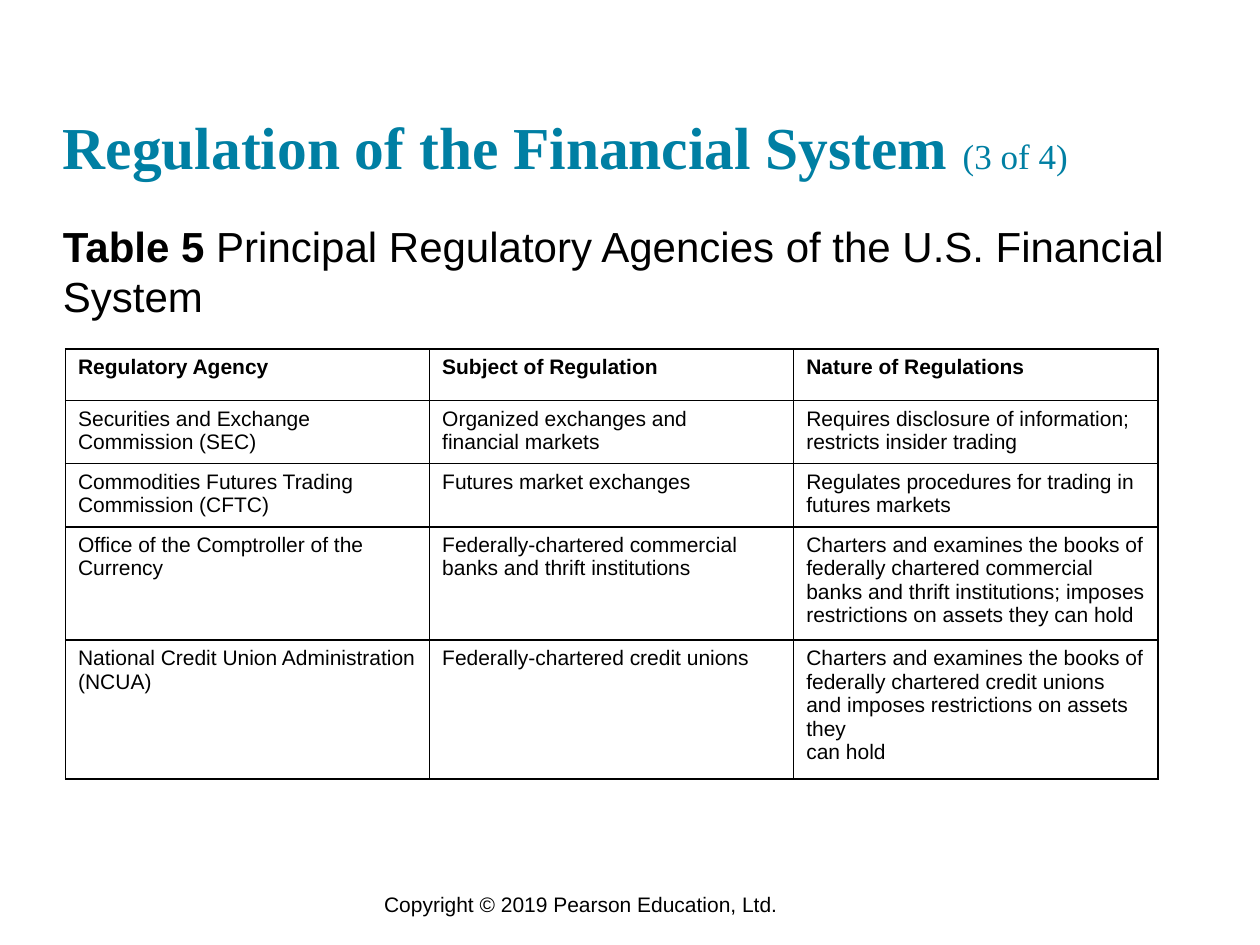
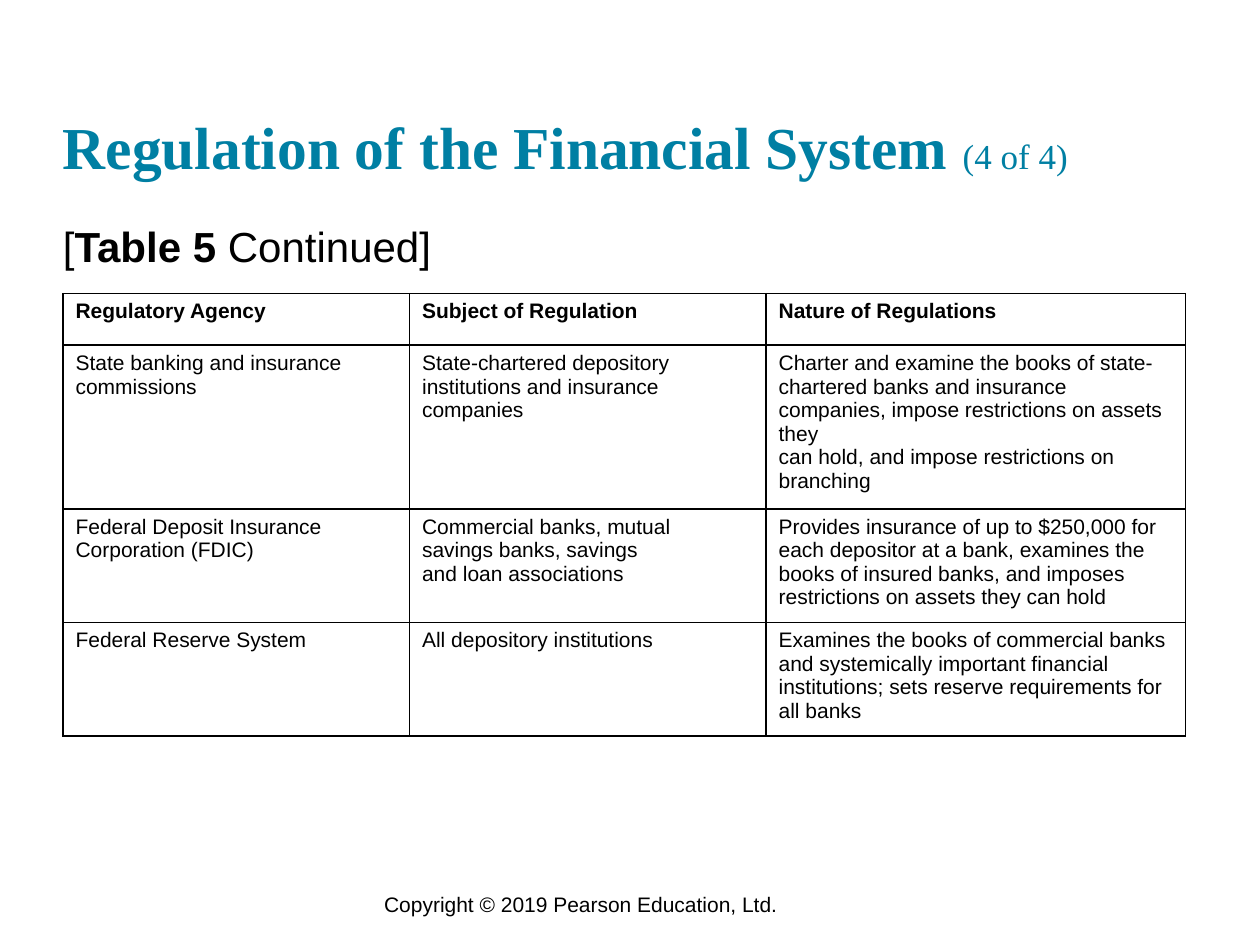
from lxml.etree import SubElement
from pptx import Presentation
from pptx.dml.color import RGBColor
from pptx.enum.text import MSO_ANCHOR
from pptx.oxml.ns import qn
from pptx.util import Inches, Pt

TEAL, BLACK = "007FA3", "000000"
SANS, SERIF = "Arial", "Times New Roman"
LEFT, WIDE, ROW = 0.5, 9, 0.41


def style(font, name, size, color):
    font.name, font.size = name, Pt(size)
    font.color.rgb = RGBColor.from_string(color)


def write(slide, area, runs, name, color, pad=True, anchor=MSO_ANCHOR.TOP):
    frame = slide.shapes.add_textbox(*map(Inches, area)).text_frame
    frame.word_wrap = True
    frame.vertical_anchor = anchor
    if not pad:
        frame.margin_left = frame.margin_right = 0
        frame.margin_top = frame.margin_bottom = 0
    for text, size, bold in runs:
        run = frame.paragraphs[0].add_run()
        run.text = text
        style(run.font, name, size, color)
        run.font.bold = bold


HEAD = ["Regulatory Agency", "Subject of Regulation", "Nature of Regulations"]
PAGES = [
    {
        "part": "(3 of 4)",
        "lead": [
            ("Table 5 ", 24, True),
            ("Principal Regulatory Agencies of the U.S. Financial System", 24, False),
        ],
        "deep": 0.87,
        "at": (0.52, 2.77),
        "cols": [2.89] * 3,
        "rows": [
            ["Securities and Exchange\nCommission (SEC)",
             "Organized exchanges and\nfinancial markets",
             "Requires disclosure of information; restricts insider trading"],
            ["Commodities Futures Trading Commission (CFTC)",
             "Futures market exchanges",
             "Regulates procedures for trading in futures markets"],
            ["Office of the Comptroller of the Currency",
             "Federally-chartered commercial banks and thrift institutions",
             "Charters and examines the books of federally chartered commercial "
             "banks and thrift institutions; imposes restrictions on assets they can hold"],
            ["National Credit Union Administration (NCUA)",
             "Federally-chartered credit unions",
             "Charters and examines the books of federally chartered credit unions "
             "and imposes restrictions on assets they\ncan hold"],
        ],
    },
    {
        "part": "(4 of 4)",
        "lead": [("[", 24, False), ("Table 5 ", 24, True), ("Continued]", 24, False)],
        "deep": 0.42,
        "at": (LEFT, 2.33),
        "cols": [2.75, 2.83, 3.33],
        "rows": [
            ["State banking and insurance\ncommissions",
             "State-chartered depository\ninstitutions and insurance\ncompanies",
             "Charter and examine the books of state-chartered banks and insurance "
             "companies, impose restrictions on assets they\n"
             "can hold, and impose restrictions on branching"],
            ["Federal Deposit Insurance\nCorporation (FDIC)",
             "Commercial banks, mutual\nsavings banks, savings\nand loan associations",
             "Provides insurance of up to $250,000 for each depositor at a bank, "
             "examines the books of insured banks, and imposes\n"
             "restrictions on assets they can hold"],
            ["Federal Reserve System",
             "All depository institutions",
             "Examines the books of commercial banks and systemically important "
             "financial institutions; sets reserve requirements for all banks"],
        ],
    },
]

deck = Presentation()
deck.slide_width, deck.slide_height = Inches(10), Inches(7.5)

for page in PAGES:
    slide = deck.slides.add_slide(deck.slide_layouts[6])
    write(slide, (2.95, 7.03, 6.75, 0.3),
          [("Copyright © 2019 Pearson Education, Ltd.", 12, False)], SANS, BLACK)
    write(slide, (LEFT, 0.24, WIDE, 1.2),
          [("Regulation of the Financial System ", 34, True), (page["part"], 20, False)],
          SERIF, TEAL, pad=False, anchor=MSO_ANCHOR.BOTTOM)
    write(slide, (LEFT, 1.75, WIDE, page["deep"]), page["lead"], SANS, BLACK, pad=False)

    rows, cols = [HEAD] + page["rows"], page["cols"]
    area = (*page["at"], sum(cols), ROW * len(rows))
    table = slide.shapes.add_table(len(rows), len(cols), *map(Inches, area)).table
    table.horz_banding = False
    for col, width in zip(table.columns, cols):
        col.width = Inches(width)
    for r, texts in enumerate(rows):
        table.rows[r].height = Inches(ROW)
        for c, text in enumerate(texts):
            cell = table.cell(r, c)
            cell.text = text
            for para in cell.text_frame.paragraphs:
                style(para.font, SANS, 12, BLACK)
                para.font.bold = r == 0
            props = cell._tc.get_or_add_tcPr()
            for side in ("lnL", "lnR", "lnT", "lnB"):
                line = SubElement(props, qn("a:" + side), w=str(Pt(1)))
                fill = SubElement(line, qn("a:solidFill"))
                SubElement(fill, qn("a:srgbClr"), val=BLACK)
            cell.fill.background()

deck.save("out.pptx")
